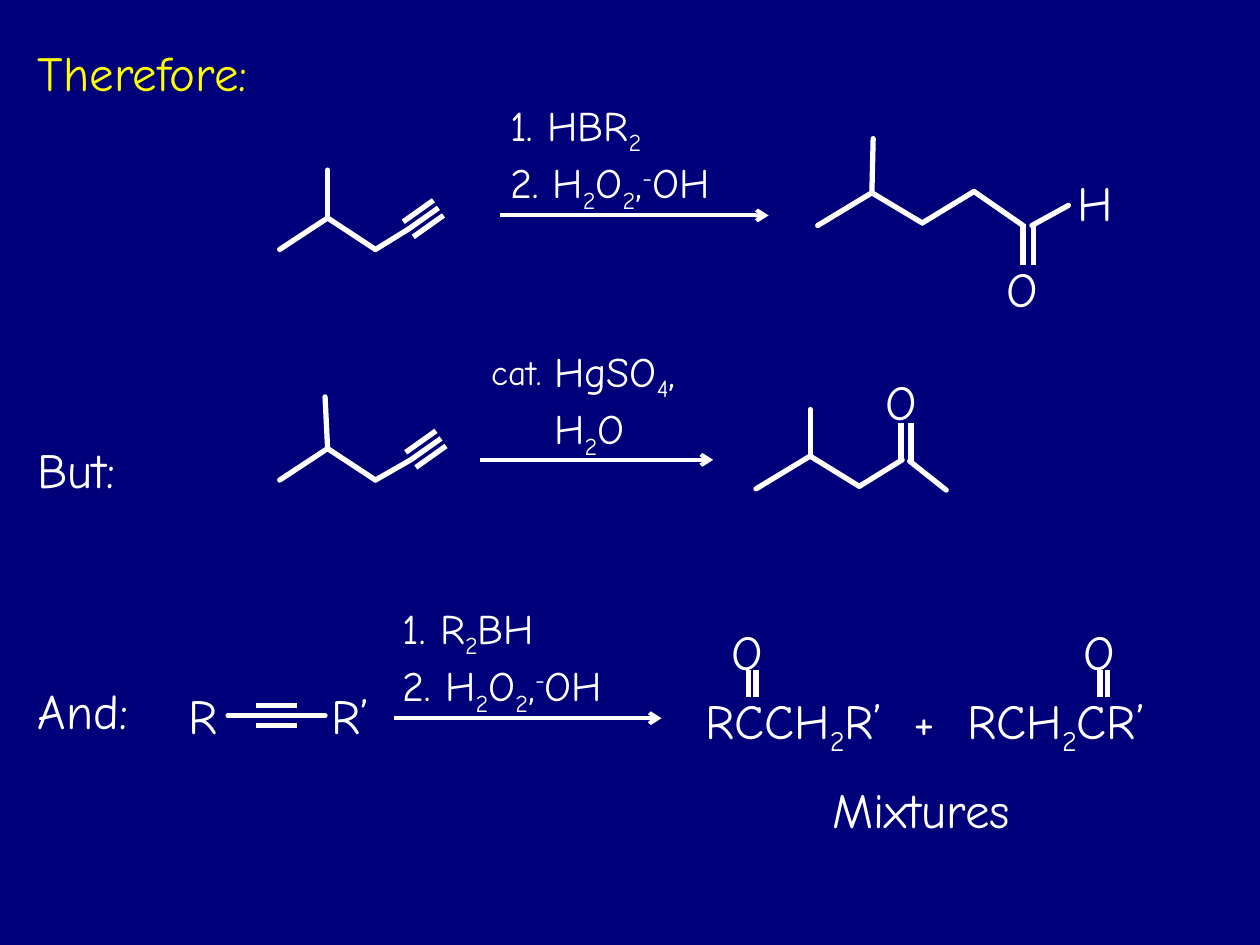
from dataclasses import dataclass
from itertools import pairwise

from lxml.etree import SubElement
from pptx import Presentation
from pptx.dml.color import RGBColor as RGB
from pptx.enum.shapes import MSO_CONNECTOR as CONN
from pptx.enum.text import MSO_ANCHOR as ANCHOR, MSO_AUTO_SIZE as AUTO, PP_ALIGN as ALIGN
from pptx.oxml.ns import qn
from pptx.util import Cm, Pt


@dataclass(frozen=True)
class Theme:
    font: str = "Comic Neue"
    background: RGB = RGB(0x00, 0x00, 0x7A)
    ink: RGB = RGB(0xFF, 0xFF, 0xFF)
    accent: RGB = RGB(0xFF, 0xFF, 0x00)
    large: int = 28
    reagent: int = 24
    small: int = 20
    bond: float = 3
    arrow: float = 2.25


BASELINES = {"_": "-25000", "^": "30000"}
LABEL_HEIGHT = 0.57
PEROXIDE = ("2. H", "_2", "O", "_2", ",", "^-", "OH")


def inches(value):
    return Cm(value * 2.54)


class Scheme:
    """Draws reactions on one slide; places are given in inches."""

    def __init__(self, slide, theme):
        self.slide = slide
        self.theme = theme
        fill = slide.background.fill
        fill.solid()
        fill.fore_color.rgb = theme.background

    def title(self, text, left, top, width):
        sp = self.slide.shapes.title
        sp.left, sp.top, sp.width, sp.height = map(
            inches, (left, top, width, LABEL_HEIGHT))
        self._write(sp.text_frame, [text], self.theme.large, self.theme.accent)

    def text(self, left, top, width, *runs, size=None, height=LABEL_HEIGHT, tab=None):
        sp = self.slide.shapes.add_textbox(*map(inches, (left, top, width, height)))
        self._write(sp.text_frame, runs, size or self.theme.large, self.theme.ink)
        if tab:
            stops = SubElement(sp.text_frame.paragraphs[0]._p.get_or_add_pPr(), qn("a:tabLst"))
            SubElement(stops, qn("a:tab"), pos=str(inches(tab)), algn="l")

    def _write(self, tf, runs, size, color):
        """Runs led by _ or ^ are sub- or superscripts; a newline breaks the line."""
        tf.word_wrap = True
        tf.auto_size = AUTO.SHAPE_TO_FIT_TEXT
        tf.vertical_anchor = ANCHOR.TOP
        p = tf.paragraphs[0]
        p.alignment = ALIGN.LEFT
        p.space_before = Pt(0)
        for text in runs:
            if text == "\n":
                p.add_line_break()
                continue
            r = p.add_run()
            r.font.name = self.theme.font
            r.font.size = Pt(size)
            r.font.color.rgb = color
            if text[0] in BASELINES:
                r.font._element.set("baseline", BASELINES[text[0]])
                text = text[1:]
            r.text = text

    def line(self, start, end, weight):
        """Draw a plain line and return its a:ln element."""
        cx = self.slide.shapes.add_connector(
            CONN.STRAIGHT, *map(inches, (*start, *end)))
        cx.line.color.rgb = self.theme.ink
        cx.line.width = Pt(weight)
        props = cx._element.spPr
        SubElement(props, qn("a:effectLst"))
        return props.find(qn("a:ln"))

    def chain(self, *points):
        for start, end in pairwise(points):
            self.line(start, end, self.theme.bond).set("cap", "rnd")

    def multiple(self, start, end, offsets):
        """Parallel bonds, one for each (dx, dy) offset."""
        for dx, dy in offsets:
            self.line((start[0] + dx, start[1] + dy),
                      (end[0] + dx, end[1] + dy), self.theme.bond)

    def double(self, x, top, bottom, gap):
        self.multiple((x, top), (x, bottom), [(0, 0), (gap, 0)])

    def arrow(self, left, right, y):
        ln = self.line((left, y), (right, y), self.theme.arrow)
        SubElement(ln, qn("a:tailEnd"), type="arrow")

    def alkyne(self, y, tip, shift):
        """Terminal alkyne with its branch at height y and methyl end at tip."""
        branch = (2.6, y)
        alkyne_start = (3.24 + shift, y + 0.09)
        self.chain((2.22, y + 0.25), branch, (2.98, y + 0.25), alkyne_start)
        self.multiple(alkyne_start, (3.48 + shift, y - 0.08),
                      [(step * 0.04, step * 0.06) for step in (-1, 0, 1)])
        self.chain(branch, tip)

    def reagents(self, left, top, width, *runs):
        self.text(left, top, width, *runs, size=self.theme.reagent, height=0.91)

    def carbonyl(self, x):
        """Oxygen and its double bond above a condensed formula."""
        self.text(x - 0.23, 4.88, 0.35, "O")
        self.double(x, 5.32, 5.53, 0.06)


def draw_hydroboration(s):
    s.title("Therefore:", 0.2, 0.29, 2.6)
    s.alkyne(1.73, (2.6, 1.35), 0)
    s.reagents(3.95, 0.74, 2.12, "1. HBR", "_2", "\n", *PEROXIDE)
    s.arrow(3.97, 6.1, 1.71)
    branch = (6.92, 1.53)
    s.chain((6.49, 1.79), branch, (7.32, 1.77), (7.73, 1.52), (8.12, 1.79))
    s.chain(branch, (6.93, 1.1))
    s.double(8.12, 1.78, 2.1, 0.08)
    s.chain((8.19, 1.79), (8.48, 1.63))
    s.text(8.45, 1.32, 0.54, "H")
    s.text(7.89, 2, 0.65, "O")


def draw_hydration(s):
    s.text(0.2, 3.44, 0.99, "But:")
    s.alkyne(3.56, (2.58, 3.15), 0.02)
    s.text(3.8, 2.73, 1.1, "cat.", size=s.theme.small, height=0.43)
    s.reagents(4.3, 2.69, 1.44, "HgSO", "_4", ",", "\n", "H", "_2", "O")
    s.arrow(3.81, 5.66, 3.65)
    branch = (6.43, 3.62)
    s.chain((6, 3.88), branch, (6.82, 3.86), (7.16, 3.65))
    s.chain(branch, (6.43, 3.25))
    s.double(7.15, 3.36, 3.67, 0.08)
    s.chain((7.22, 3.66), (7.51, 3.89))
    s.text(6.93, 2.9, 0.65, "O")


def draw_internal_alkyne(s):
    s.text(0.2, 5.35, 1.11, "And:")
    s.text(1.4, 5.39, 0.44, "R")
    s.text(2.53, 5.39, 0.63, "R’")
    s.chain((1.81, 5.68), (2.58, 5.68))
    s.multiple((2.03, 5.68), (2.36, 5.68), [(0, -0.08), (0, 0.08)])
    s.reagents(3.1, 4.73, 2.14, "1. R", "_2", "BH", "\n", *PEROXIDE)
    s.arrow(3.13, 5.25, 5.7)
    s.text(5.5, 5.43, 2.23, "RCCH", "_2", "R’\t+", tab=1.65)
    s.text(7.58, 5.43, 1.71, "RCH", "_2", "CR’")
    for x in (5.94, 8.73):
        s.carbonyl(x)
    s.text(6.51, 6.14, 2.18, "Mixtures")


def main():
    prs = Presentation()
    prs.slide_width, prs.slide_height = inches(10), inches(7.5)
    title_only = prs.slide_layouts[5]
    s = Scheme(prs.slides.add_slide(title_only), Theme())
    draw_hydroboration(s)
    draw_hydration(s)
    draw_internal_alkyne(s)
    prs.save("out.pptx")


if __name__ == "__main__":
    main()
